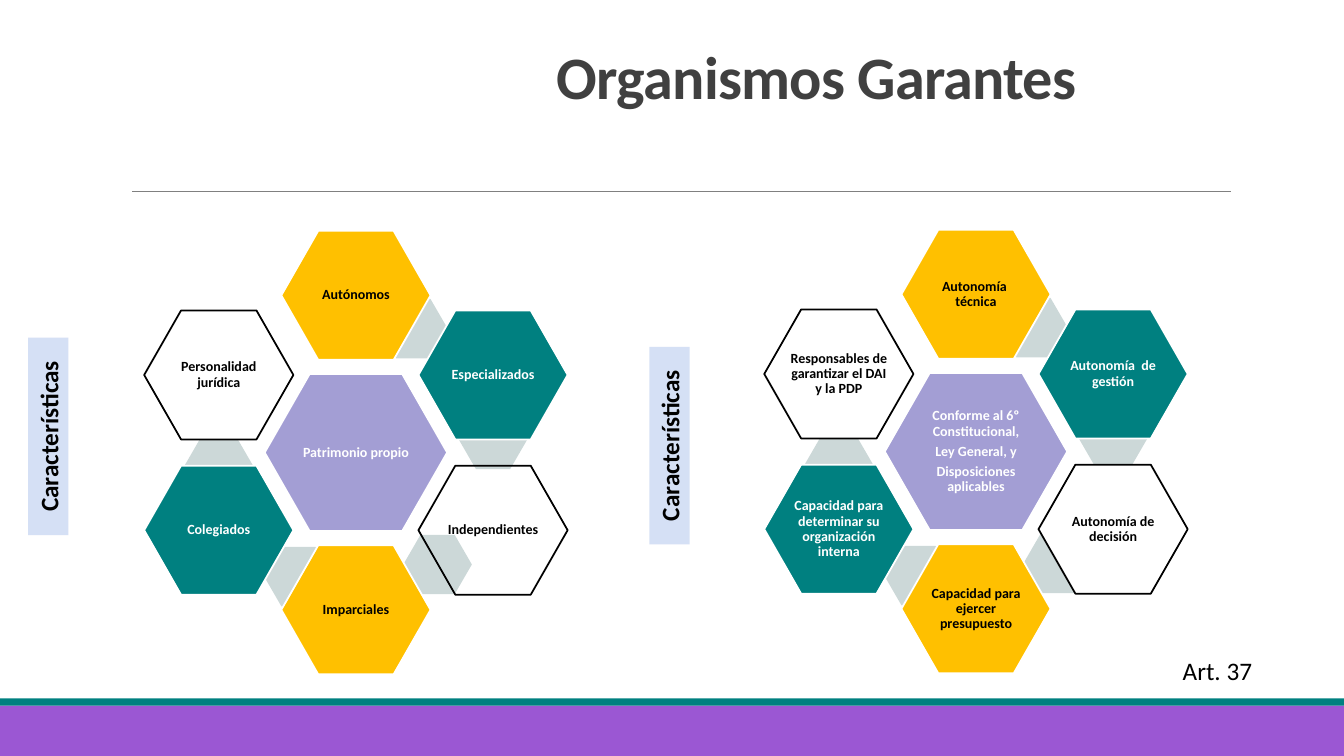
from lxml import etree
from pptx import Presentation
from pptx import util as u
from pptx.dml.color import RGBColor
from pptx.enum import shapes, text
from pptx.oxml.ns import qn

COLORS = {
    "purple": "9B57D3", "teal": "008080", "lilac": "A39ED4", "amber": "FFC000",
    "link": "CCD8D8", "label": "9BB4E9", "rule": "808080", "title": "404040",
    "white": "FFFFFF", "black": "000000",
}


def add_shape(parent, kind, left, top, width, height, fill, line=None):
    sp = parent.add_shape(kind, u.Inches(left), u.Inches(top), u.Inches(width), u.Inches(height))
    sp.shadow.inherit = False
    if fill:
        sp.fill.solid()
        sp.fill.fore_color.rgb = RGBColor.from_string(COLORS[fill])
    else:
        sp.fill.background()
    if line:
        sp.line.color.rgb = RGBColor.from_string(COLORS[line])
        sp.line.width = u.Pt(1.25)
    else:
        sp.line.fill.background()
    return sp


def write(sp, words, size, color, bold=True):
    tf = sp.text_frame
    tf.word_wrap = True
    tf.text = words
    for p in tf.paragraphs:
        p.alignment = text.PP_ALIGN.CENTER
        for r in p.runs:
            r.font.name = "Calibri"
            r.font.size = u.Pt(size)
            r.font.bold = bold
            r.font.color.rgb = RGBColor.from_string(COLORS[color])
    return tf


prs = Presentation()
prs.slide_width, prs.slide_height = u.Inches(13.33), u.Inches(7.5)
s = prs.slides.add_slide(prs.slide_layouts[6])
RECT = shapes.MSO_SHAPE.RECTANGLE
HEXAGON = shapes.MSO_SHAPE.HEXAGON

# Footer bands and title rule
add_shape(s.shapes, RECT, 0, 7, 13.33, 0.5, "purple")
add_shape(s.shapes, RECT, 0, 6.93, 13.33, 0.07, "teal")
rule = s.shapes.add_connector(shapes.MSO_CONNECTOR.STRAIGHT, u.Inches(1.31), u.Inches(1.9),
                              u.Inches(12.21), u.Inches(1.9))
rule.line.color.rgb = RGBColor.from_string(COLORS["rule"])
rule.line.width = u.Pt(0.5)
etree.SubElement(rule._element.spPr, qn("a:effectLst"))

# Title
title = s.shapes.add_textbox(u.Inches(2.86), u.Inches(0.31), u.Inches(10.48), u.Inches(0.85))
tf = write(title, "Organismos Garantes", 43, "title")
tf.vertical_anchor = text.MSO_ANCHOR.BOTTOM
p = tf.paragraphs[0]
p.line_spacing = 0.85
p.runs[0].font._element.set("spc", "-50")

# Hexagon rings: offset from the ring's centre, fill, outline, text colour, link offset
DX, DY, TOP = 1.36, 0.77, 1.56
CELLS = [
    (0, 0, "lilac", "white", "white", None),
    (0, -TOP, "amber", "white", "black", (0.57, -1.23)),
    (DX, -DY, "teal", "white", "white", (DX, -0.13)),
    (DX, DY, "white", "black", "black", (0.81, 1.11)),
    (0, TOP, "amber", "white", "black", (-0.57, 1.23)),
    (-DX, DY, "teal", "white", "white", (-DX, 0.13)),
    (-DX, -DY, "white", "black", "black", None),
]
RINGS = [
    (3.53, 4.49, ["Patrimonio propio", "Autónomos", "Especializados", "Independientes",
                  "Imparciales", "Colegiados", "Personalidad jurídica"]),
    (9.68, 4.48, ["Conforme al 6º Constitucional,\nLey General, y\nDisposiciones aplicables",
                  "Autonomía  técnica", "Autonomía  de gestión", "Autonomía de decisión",
                  "Capacidad para ejercer presupuesto",
                  "Capacidad para determinar su organización interna",
                  "Responsables de garantizar el DAI y la PDP"]),
]
for cx, cy, labels in RINGS:
    ring = s.shapes.add_group_shape().shapes
    for (dx, dy, fill, line, color, link), label in zip(CELLS, labels):
        if link:
            sp = add_shape(ring, HEXAGON, cx + link[0] - 0.34, cy + link[1] - 0.295,
                           0.68, 0.59, "link")
            sp.adjustments[0] = 0.289
        w, h = (1.81, 1.56) if label == labels[0] else (1.48, 1.28)
        if label == "Independientes":
            fill = None  # the link shows through this cell
        sp = add_shape(ring, HEXAGON, cx + dx - w / 2, cy + dy - h / 2, w, h, fill, line)
        sp.adjustments[0] = 0.286
        tf = write(sp, label, 10, color)
        tf.vertical_anchor = text.MSO_ANCHOR.MIDDLE
        tf.margin_left = tf.margin_right = tf.margin_top = tf.margin_bottom = u.Inches(0.01)
        for p in tf.paragraphs:
            p.line_spacing = 0.9
            p.space_after = u.Pt(3.5)

# Vertical labels
for left, top in [(5.66, 4.22), (-0.5, 4.13)]:
    sp = add_shape(s.shapes, RECT, left, top, 1.96, 0.4, "label")
    sp.rotation = 270
    rgb = sp._element.spPr.find(qn("a:solidFill")).find(qn("a:srgbClr"))
    etree.SubElement(rgb, qn("a:alpha"), val="41000")
    write(sp, "Características", 18, "black").vertical_anchor = text.MSO_ANCHOR.TOP

# Article reference
article = s.shapes.add_textbox(u.Inches(11.26), u.Inches(6.45), u.Inches(1.63), u.Inches(0.4))
write(article, "Art. 37", 18, "black", bold=False)

prs.save("out.pptx")
